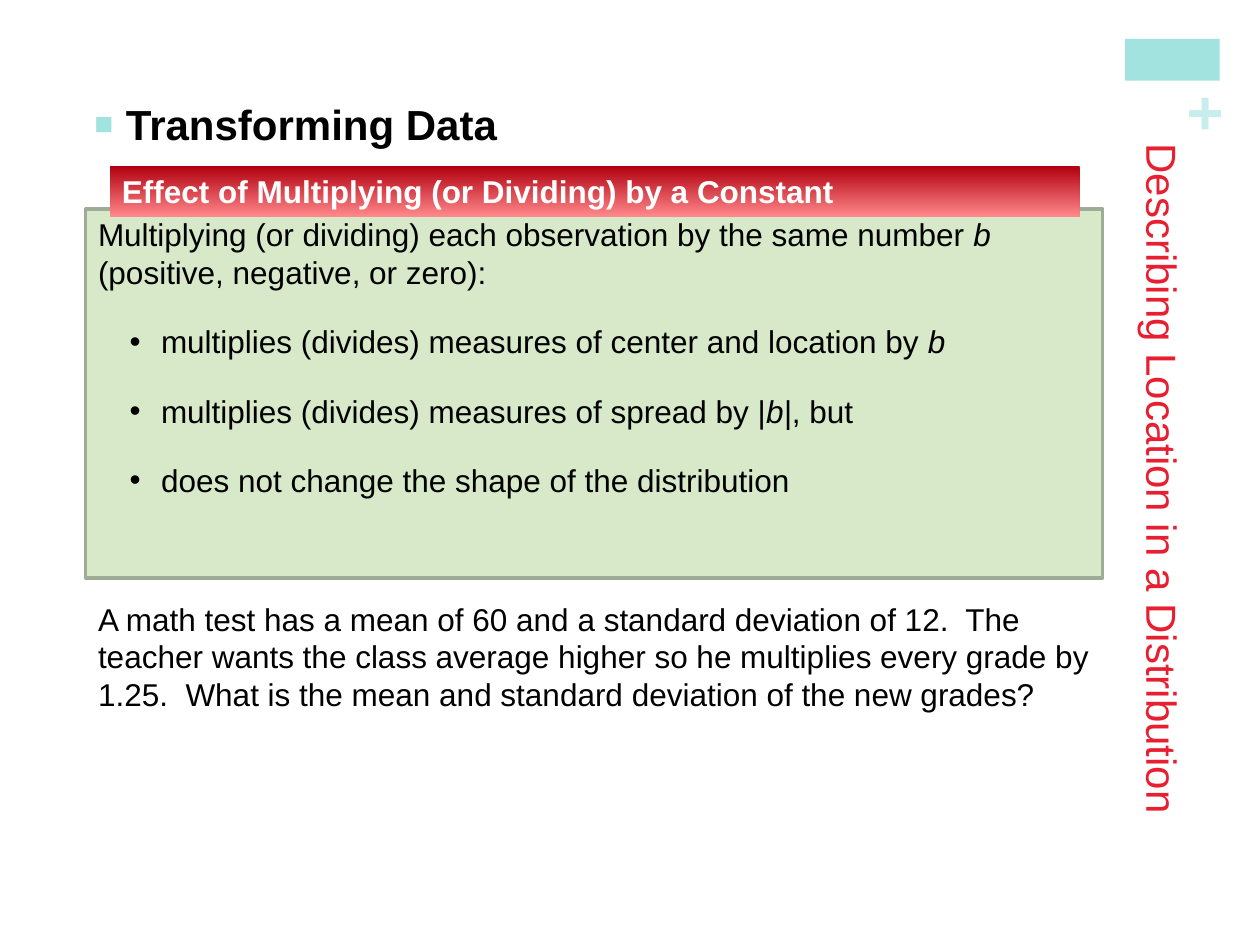
from lxml import etree
from pptx import Presentation, util as u
from pptx.dml.color import RGBColor
from pptx.enum import shapes, text
from pptx.oxml.ns import qn

Inches, Pt = u.Inches, u.Pt

BLACK = RGBColor(0x00, 0x00, 0x00)
WHITE = RGBColor(0xFF, 0xFF, 0xFF)
RED = RGBColor(0xE8, 0x1F, 0x30)
TEAL = RGBColor(0xA2, 0xE3, 0xDF)
PALE_TEAL = RGBColor(0xC7, 0xEE, 0xEC)
GREEN = RGBColor(0xD7, 0xE9, 0xC9)
GREEN_EDGE = RGBColor(0x9F, 0xAC, 0x95)
BANNER_TOP = RGBColor(0xB1, 0x00, 0x0F)
BANNER_BOTTOM = RGBColor(0xFF, 0x88, 0x8B)

RULE_INTRO = ["Multiplying (or dividing) each observation by the same number ",
              "b", " (positive, negative, or zero):"]
RULE_EFFECTS = [
    ["multiplies (divides) measures of center and location by ", "b"],
    ["multiplies (divides) measures of spread by |", "b|", ", but"],
    ["does not change the shape of the distribution"],
]
QUESTION = ("A math test has a mean of 60 and a standard deviation of 12.  "
            "The teacher wants the class average higher so he multiplies every "
            "grade by 1.25.  What is the mean and standard deviation of the new grades?")


def set_attributes(target, values):
    for name, value in values.items():
        setattr(target, name, value)


def add_text_box(slide, box, **frame_format):
    shape = slide.shapes.add_textbox(*map(Inches, box))
    set_attributes(shape.text_frame, {"word_wrap": True, **frame_format})
    return shape


def add_rectangle(slide, box):
    shape = slide.shapes.add_shape(shapes.MSO_SHAPE.RECTANGLE, *map(Inches, box))
    shape.shadow.inherit = False
    shape.line.fill.background()
    set_attributes(shape.text_frame, {"word_wrap": True,
                                      "vertical_anchor": text.MSO_ANCHOR.TOP})
    return shape


def write_runs(paragraph, pieces, size=18, color=BLACK, bold=False):
    """Write the pieces in turn; every second one is italic."""
    paragraph.alignment = text.PP_ALIGN.LEFT
    for index, piece in enumerate(pieces):
        run = paragraph.add_run()
        run.text = piece
        set_attributes(run.font, {"name": "Arial", "size": Pt(size), "bold": bold,
                                  "italic": index % 2 == 1})
        run.font.color.rgb = color


def add_bullet(paragraph, character, margin, color=None, percent=100):
    """Hang a bullet a quarter inch to the left of the margin."""
    properties = paragraph._p.get_or_add_pPr()
    properties.set("marL", str(Inches(margin)))
    properties.set("indent", str(Inches(-0.25)))
    if color is not None:
        bullet_color = etree.SubElement(properties, qn("a:buClr"))
        etree.SubElement(bullet_color, qn("a:srgbClr"), val=str(color))
    etree.SubElement(properties, qn("a:buSzPct"), val=str(percent * 1000))
    etree.SubElement(properties, qn("a:buFont"), typeface="Arial")
    etree.SubElement(properties, qn("a:buChar"), char=character)


def add_corner(slide, left, top):
    """Teal block with the plus sign under it."""
    block = add_rectangle(slide, (left, top, 0.75, 0.33))
    block.fill.solid()
    block.fill.fore_color.rgb = TEAL
    plus = add_text_box(slide, (left + 0.47, top + 0.3, 0.28, 0.61), word_wrap=False,
                        margin_left=0, margin_right=0, margin_top=0, margin_bottom=0)
    plus.rotation = 270
    write_runs(plus.text_frame.paragraphs[0], ["+"], 36, PALE_TEAL, True)


def add_side_title(slide, box):
    """Chapter title, reading downwards."""
    title = add_text_box(slide, box)
    title.text_frame._txBody.bodyPr.set("vert", "eaVert")
    write_runs(title.text_frame.paragraphs[0],
               ["Describing Location in a Distribution"], 24, RED)


def add_heading(slide, box):
    heading = add_text_box(slide, box, margin_left=Inches(0.07), margin_top=Inches(0.13))
    paragraph = heading.text_frame.paragraphs[0]
    write_runs(paragraph, ["Transforming Data"], 24, BLACK, True)
    add_bullet(paragraph, "■", 0.25, TEAL, 75)


def add_rule_panel(slide, box):
    """Green panel with the rule, and the red banner over its top edge."""
    left, top, width, _ = box
    panel = add_rectangle(slide, box)
    panel.fill.solid()
    panel.fill.fore_color.rgb = GREEN
    panel.line.color.rgb = GREEN_EDGE
    panel.line.width = Pt(2)
    frame = panel.text_frame
    write_runs(frame.paragraphs[0], RULE_INTRO)
    for effect in RULE_EFFECTS:
        paragraph = frame.add_paragraph()
        write_runs(paragraph, effect)
        add_bullet(paragraph, "•", 0.5)
    for paragraph in frame.paragraphs:
        paragraph.space_after = Pt(18)

    banner = add_rectangle(slide, (left + 0.19, top - 0.34, width - 0.37, 0.4))
    banner.fill.gradient()
    banner.fill.gradient_angle = 270
    for stop, position, color in zip(banner.fill.gradient_stops, (0, 1),
                                     (BANNER_TOP, BANNER_BOTTOM)):
        stop.position = position
        stop.color.rgb = color
    write_runs(banner.text_frame.paragraphs[0],
               ["Effect of Multiplying (or Dividing) by a Constant"], 18, WHITE, True)


def add_question(slide, box):
    question = add_text_box(slide, box)
    write_runs(question.text_frame.paragraphs[0], [QUESTION])


def main():
    presentation = Presentation()
    presentation.slide_width = Inches(10)
    presentation.slide_height = Inches(7.5)
    slide = presentation.slides.add_slide(presentation.slide_layouts[6])

    left, width = 0.68, 8.07
    add_corner(slide, 8.93, 0.31)
    add_side_title(slide, (8.74, 1.04, 0.74, 6.18))
    add_heading(slide, (left, 0.65, width, 1.41))
    add_rule_panel(slide, (left, 1.66, width, 2.93))
    add_question(slide, (left, 4.71, width, 1.01))
    presentation.save("out.pptx")


if __name__ == "__main__":
    main()
